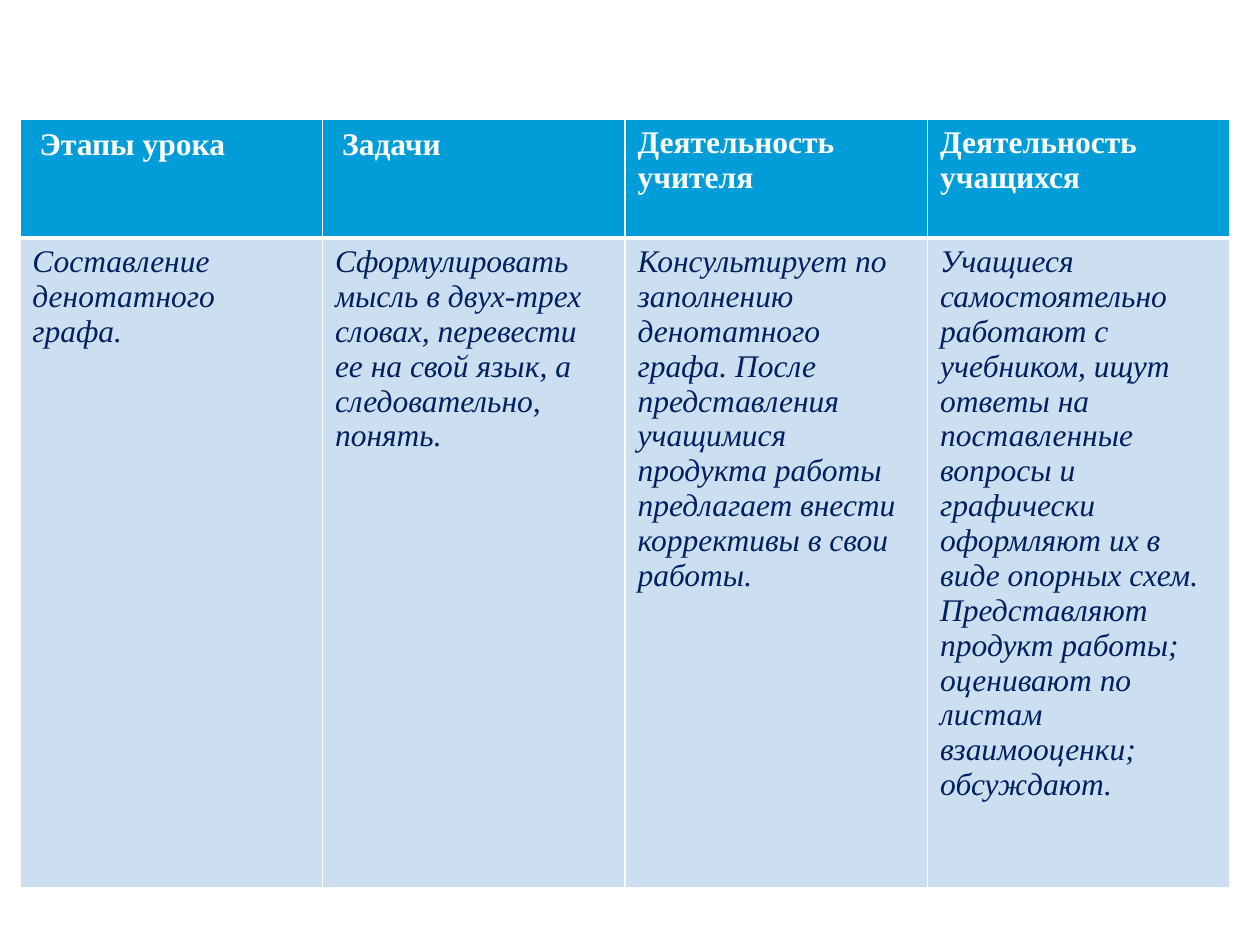
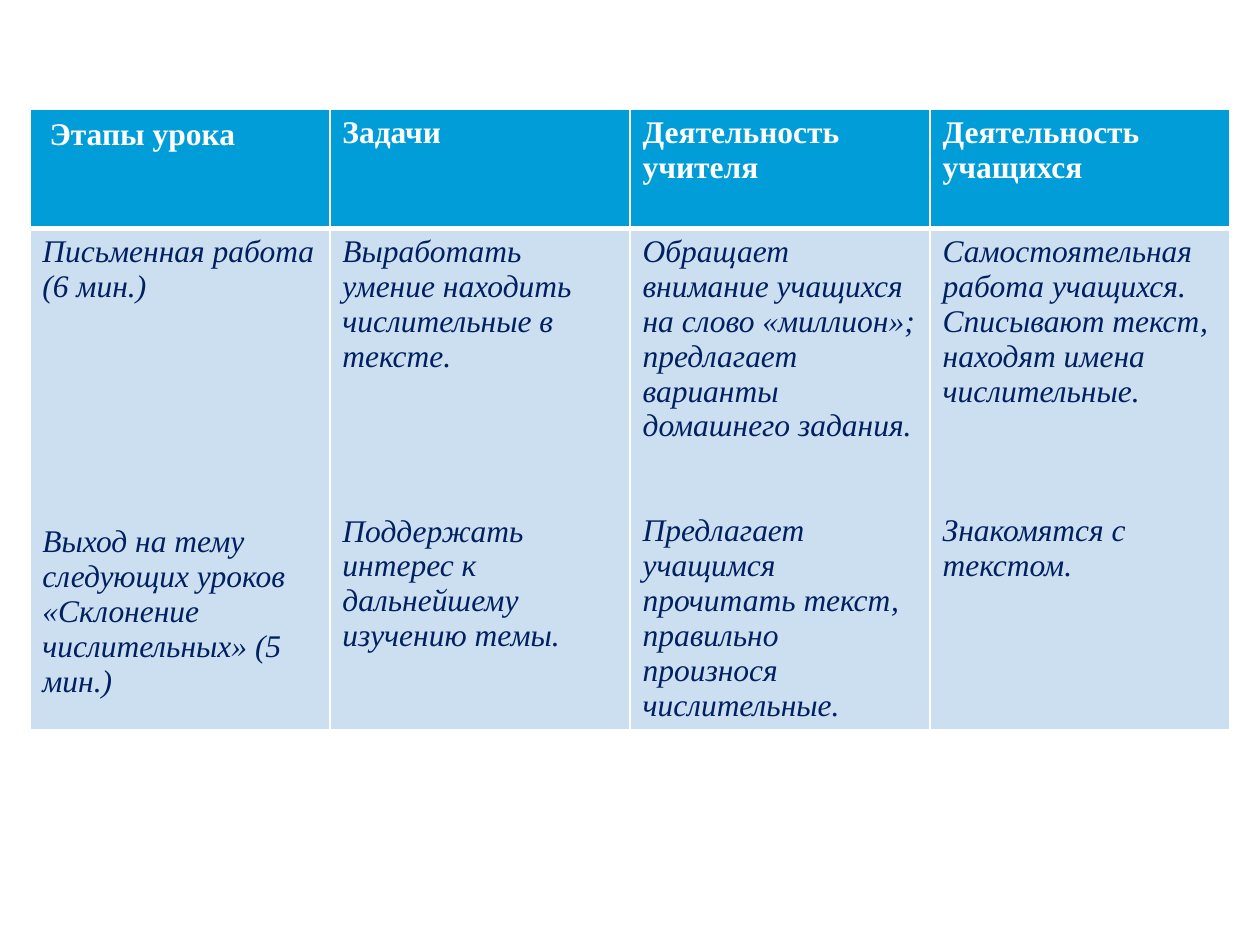
from lxml import etree
from pptx import Presentation
from pptx.dml.color import RGBColor
from pptx.oxml.ns import qn
from pptx.util import Cm, Pt

COLORS = {"header": "009DD9", "body": "CCDFF1", "ink": "002060", "white": "FFFFFF"}
FONT, SPACE_FONT = "Times New Roman", "Calibri"
TEXT_SIZE = 18
HEADER_HEIGHT = 2.4
BLANK_LAYOUT = 6

# Each body cell lists (paragraph, space before in points); lengths are in centimetres.
LESSON_TABLES = [
    {
        "left": 0.4, "top": 2.4, "width": 24.4, "body_height": 13.1,
        "headers": [" Этапы урока", " Задачи", "Деятельность учителя", "Деятельность учащихся"],
        "cells": [
            [("Составление денотатного графа.", 0)],
            [("Сформулировать мысль в двух-трех словах, перевести ее на свой язык, "
              "а следовательно, понять.", 0)],
            [("Консультирует по заполнению денотатного графа. После представления учащимися "
              "продукта работы предлагает внести коррективы в свои работы.", 0)],
            [("Учащиеся самостоятельно работают с учебником, ищут ответы на поставленные "
              "вопросы и графически оформляют их в виде опорных схем.", 0),
             ("Представляют продукт работы;", 0),
             ("оценивают по листам взаимооценки; обсуждают.", 0)],
        ],
    },
    {
        "left": 0.6, "top": 2.2, "width": 24.2, "body_height": 10.1,
        "headers": [" Этапы урока", "Задачи", "Деятельность учителя", "Деятельность учащихся"],
        "cells": [
            [("Письменная работа (6 мин.)", 0),
             ("Выход на тему следующих уроков «Склонение числительных» (5 мин.)", 126)],
            [("Выработать умение находить числительные в тексте.", 0),
             ("Поддержать интерес к дальнейшему изучению темы.", 80)],
            [("Обращает внимание учащихся на слово «миллион»; предлагает варианты "
              "домашнего задания.", 0),
             ("Предлагает учащимся прочитать текст, правильно произнося числительные.", 40)],
            [("Самостоятельная работа учащихся. Списывают текст, находят имена "
              "числительные.", 0),
             ("Знакомятся с текстом.", 60)],
        ],
    },
]


def rgb(name):
    return RGBColor.from_string(COLORS[name])


def add_text(paragraph, text, font=FONT, color="ink", bold=False, italic=False):
    run = paragraph.add_run()
    run.text = text
    run.font.name = font
    run.font.size = Pt(TEXT_SIZE)
    run.font.color.rgb = rgb(color)
    run.font.bold = bold
    run.font.italic = italic


def style_cell(cell, fill, borders):
    """Set white borders, given as side-to-points, and then the fill."""
    properties = cell._tc.get_or_add_tcPr()
    for side, points in borders.items():
        line = etree.SubElement(properties, qn(f"a:ln{side}"), w=str(Pt(points)))
        solid = etree.SubElement(line, qn("a:solidFill"))
        etree.SubElement(solid, qn("a:srgbClr"), val=COLORS["white"])
    cell.fill.solid()
    cell.fill.fore_color.rgb = rgb(fill)


def fill_header(cell, title):
    style_cell(cell, "header", {"L": 1, "R": 1, "T": 1, "B": 3})
    paragraph = cell.text_frame.paragraphs[0]
    if title.startswith(" "):
        add_text(paragraph, " ", font=SPACE_FONT, color="white", bold=True)
    add_text(paragraph, title.strip(), color="white", bold=True)


def fill_body(cell, paragraphs):
    style_cell(cell, "body", {"L": 1, "R": 1, "T": 3, "B": 1})
    frame = cell.text_frame
    for index, (text, gap) in enumerate(paragraphs):
        paragraph = frame.add_paragraph() if index else frame.paragraphs[0]
        paragraph.space_before = Pt(gap)
        add_text(paragraph, text, italic=True)


def add_lesson_slide(presentation, lesson):
    slide = presentation.slides.add_slide(presentation.slide_layouts[BLANK_LAYOUT])
    columns = len(lesson["headers"])
    table = slide.shapes.add_table(
        2, columns, Cm(lesson["left"]), Cm(lesson["top"]), Cm(lesson["width"]),
        Cm(HEADER_HEIGHT + lesson["body_height"])).table
    table.rows[0].height = Cm(HEADER_HEIGHT)
    table.rows[1].height = Cm(lesson["body_height"])
    for column, (title, paragraphs) in enumerate(zip(lesson["headers"], lesson["cells"])):
        table.columns[column].width = Cm(lesson["width"] / columns)
        fill_header(table.cell(0, column), title)
        fill_body(table.cell(1, column), paragraphs)


def main():
    presentation = Presentation()
    presentation.slide_width, presentation.slide_height = Cm(25.4), Cm(19.05)
    for lesson in LESSON_TABLES:
        add_lesson_slide(presentation, lesson)
    presentation.save("out.pptx")


if __name__ == "__main__":
    main()
